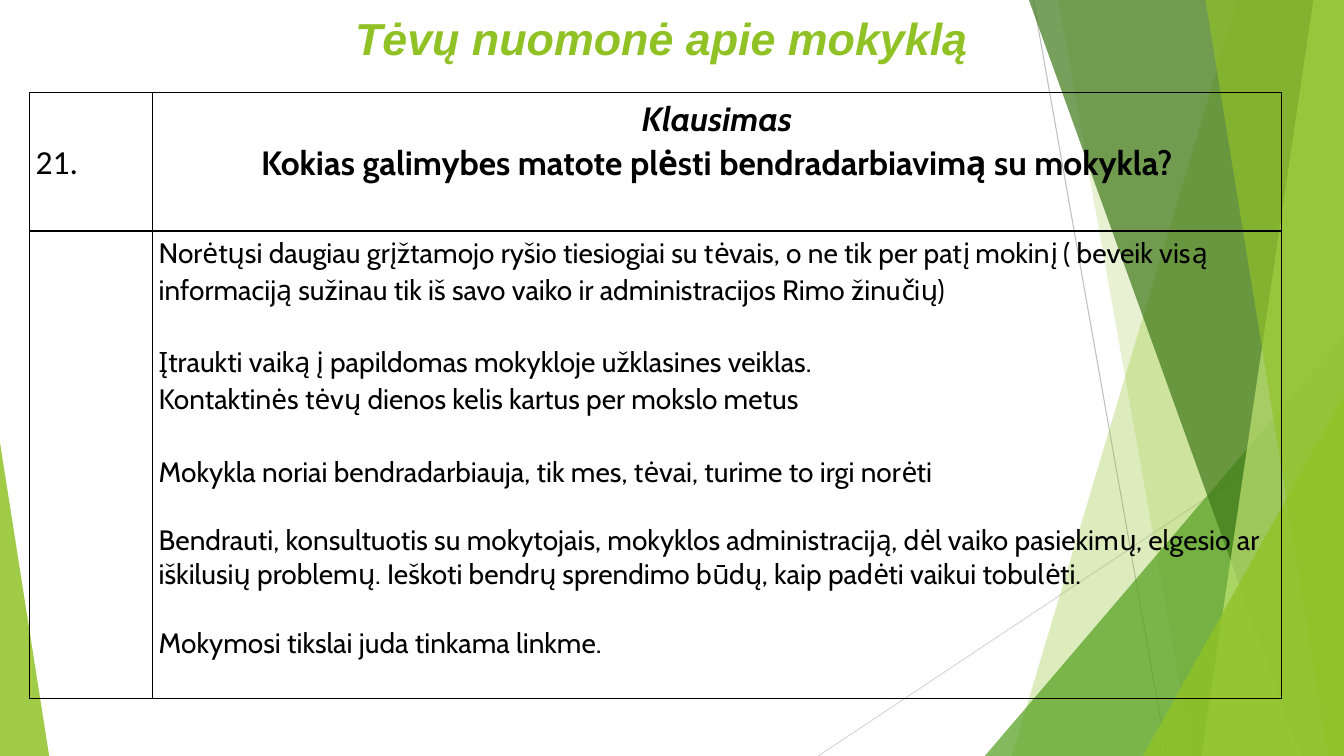
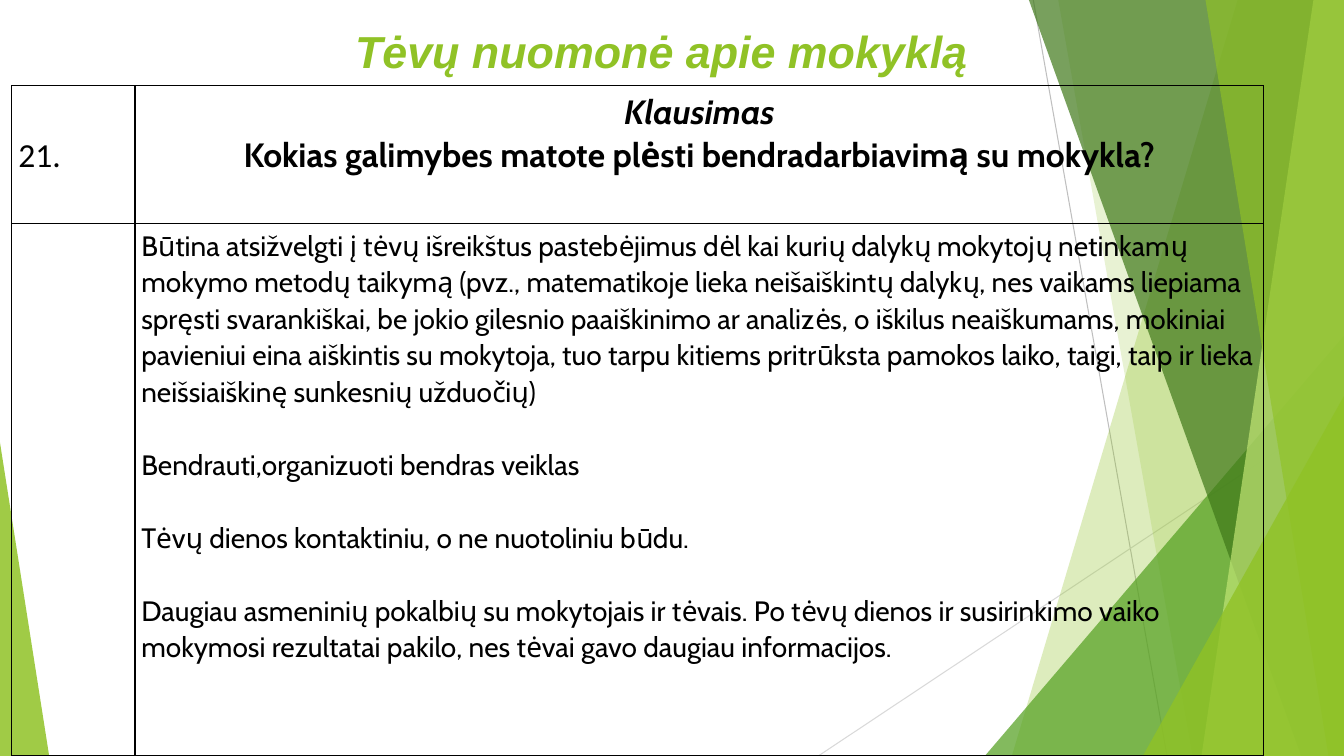
from lxml.etree import SubElement
from pptx import Presentation
from pptx.dml.color import RGBColor
from pptx.enum.shapes import MSO_CONNECTOR, MSO_SHAPE
from pptx.enum.text import MSO_ANCHOR, PP_ALIGN
from pptx.oxml.ns import qn
from pptx.util import Cm, Pt

W, H = 33.87, 19.05
LIME, GREEN, FOREST, PALE = "90C226", "54A021", "3F7819", "C0E474"
BLACK = "000000"

TITLE = dict(name="Arial", size=Pt(32), bold=True, italic=True)
NUMBER = dict(name="Calibri", size=Pt(24))
LABEL = dict(name="Cabin", size=Pt(24), bold=True, italic=True)
QUESTION = dict(name="Cabin", size=Pt(24), bold=True)
ANSWER = dict(name="Cabin", size=Pt(20))

COLUMNS = (3.1, 28.45)
HEADER_HEIGHT = 3.48
LOOSE = dict(line_spacing=1.07, space_before=Pt(26))
JOINED = dict(line_spacing=1.07)
TIGHT = dict(line_spacing=1.0, space_before=Pt(24.5))
CENTRED = dict(line_spacing=1.07, alignment=PP_ALIGN.CENTER)

SLIDES = [
    dict(title_top=0.05, left=0.74, top=2.34, answer_height=11.79, answers=[
        ("Norėtųsi daugiau grįžtamojo ryšio tiesiogiai su tėvais, o ne tik per patį mokinį "
         "( beveik visą informaciją sužinau tik iš savo vaiko ir administracijos Rimo žinučių)",
         JOINED),
        ("Įtraukti vaiką į papildomas mokykloje užklasines veiklas.", LOOSE),
        ("Kontaktinės tėvų dienos kelis kartus per mokslo metus", JOINED),
        ("Mokykla noriai bendradarbiauja, tik mes, tėvai, turime to irgi norėti", LOOSE),
        ("Bendrauti, konsultuotis su mokytojais, mokyklos administraciją, dėl vaiko pasiekimų, "
         "elgesio ar iškilusių problemų. Ieškoti bendrų sprendimo būdų, kaip padėti vaikui "
         "tobulėti.", TIGHT),
        ("Mokymosi tikslai juda tinkama linkme.", TIGHT),
    ]),
    dict(title_top=0.38, left=0.3, top=2.16, answer_height=13.41, answers=[
        ("Būtina atsižvelgti į tėvų išreikštus pastebėjimus dėl kai kurių dalykų mokytojų "
         "netinkamų mokymo metodų taikymą (pvz., matematikoje lieka neišaiškintų dalykų, nes "
         "vaikams liepiama spręsti svarankiškai, be jokio gilesnio paaiškinimo ar analizės, o "
         "iškilus neaiškumams, mokiniai pavieniui eina aiškintis su mokytoja, tuo tarpu kitiems "
         "pritrūksta pamokos laiko, taigi, taip ir lieka neišsiaiškinę sunkesnių užduočių)",
         JOINED),
        ("Bendrauti,organizuoti bendras veiklas", LOOSE),
        ("Tėvų dienos kontaktiniu, o ne nuotoliniu būdu.", LOOSE),
        ("Daugiau asmeninių pokalbių su mokytojais ir tėvais. Po tėvų dienos ir susirinkimo vaiko "
         "mokymosi rezultatai pakilo, nes tėvai gavo daugiau informacijos.", LOOSE),
    ]),
]


def rgb(color):
    return RGBColor.from_string(color)


def set_attrs(obj, values):
    for name, value in values.items():
        setattr(obj, name, value)


def paint(sp, color, opacity):
    """Fill a shape with a see-through colour; opacity is in percent."""
    sp.shadow.inherit = False
    sp.line.fill.background()
    sp.fill.solid()
    sp.fill.fore_color.rgb = rgb(color)
    clr = sp.fill._xPr.find(".//" + qn("a:srgbClr"))
    SubElement(clr, qn("a:alpha"), val=str(opacity * 1000))


def add_line(s, x1, y1, x2, y2, color):
    line = s.shapes.add_connector(MSO_CONNECTOR.STRAIGHT, Cm(x1), Cm(y1), Cm(x2), Cm(y2))
    line.line.color.rgb = rgb(color)
    line.line.width = Pt(0.75)
    SubElement(line._element.spPr, qn("a:effectLst"))


def add_veil(s, top_x, bottom_x, color, opacity):
    """Full-height band from a slanted left edge to the right edge of the slide."""
    builder = s.shapes.build_freeform(Cm(top_x), 0)
    builder.add_line_segments([(Cm(W), 0), (Cm(W), Cm(H)), (Cm(bottom_x), Cm(H))])
    paint(builder.convert_to_shape(), color, opacity)


def add_corner(s, left, top, right, apex, color, opacity):
    """Triangle standing on the bottom edge; apex 0 is left, 1 is right."""
    sp = s.shapes.add_shape(MSO_SHAPE.ISOSCELES_TRIANGLE,
                            Cm(left), Cm(top), Cm(right - left), Cm(H - top))
    sp.adjustments[0] = apex
    paint(sp, color, opacity)


def add_background(s):
    add_line(s, 26.04, 0, 29.41, H, "BFBFBF")
    add_line(s, W, 10.24, 20.62, H, "D9D9D9")
    add_veil(s, 31.19, 25.5, LIME, 30)
    add_veil(s, 26.67, 30.05, LIME, 20)
    add_corner(s, 24.82, 8.46, W, 1, GREEN, 72)
    add_veil(s, 25.93, 32.79, FOREST, 70)
    add_veil(s, 33.1, 30.28, PALE, 70)
    add_veil(s, 30.38, 33.48, LIME, 65)
    add_corner(s, 28.8, 9.98, W, 1, LIME, 80)
    add_corner(s, 0, 11.15, 1.24, 0, LIME, 85)


def write(tf, lines, color=BLACK):
    """Write (text, font, paragraph format) lines, one paragraph each."""
    for i, (text, font, layout) in enumerate(lines):
        p = tf.add_paragraph() if i else tf.paragraphs[0]
        set_attrs(p, layout)
        r = p.add_run()
        r.text = text
        set_attrs(r.font, font)
        r.font.color.rgb = rgb(color)


def add_title(s, top):
    tf = s.shapes.add_textbox(Cm(1.75), Cm(top), Cm(29.54), Cm(2.62)).text_frame
    set_attrs(tf, dict(word_wrap=True, margin_left=Cm(0.56), margin_top=Cm(0.23)))
    write(tf, [("Tėvų nuomonė apie mokyklą", TITLE, dict(alignment=PP_ALIGN.CENTER))], LIME)


def frame_cell(cell):
    """Thin black border on all sides, small margins, no fill."""
    tc_pr = cell._tc.get_or_add_tcPr()
    for side in ("lnL", "lnR", "lnT", "lnB"):
        ln = SubElement(tc_pr, qn("a:" + side), w=str(Pt(1)))
        fill = SubElement(ln, qn("a:solidFill"))
        SubElement(fill, qn("a:srgbClr"), val=BLACK)
    cell.fill.background()
    set_attrs(cell, dict(margin_left=Cm(0.16), margin_right=Cm(0.16),
                         margin_top=Cm(0.08), margin_bottom=Cm(0.08)))


def add_answers(s, left, top, answer_height, answers):
    heights = (HEADER_HEIGHT, answer_height)
    table = s.shapes.add_table(2, 2, Cm(left), Cm(top),
                               Cm(sum(COLUMNS)), Cm(sum(heights))).table
    set_attrs(table, dict(first_row=False, horz_banding=False))
    for column, width in zip(table.columns, COLUMNS):
        column.width = Cm(width)
    for row, height in zip(table.rows, heights):
        row.height = Cm(height)
    for cell in table.iter_cells():
        frame_cell(cell)

    number = table.cell(0, 0)
    number.vertical_anchor = MSO_ANCHOR.MIDDLE
    write(number.text_frame, [("21.", NUMBER, JOINED)])
    write(table.cell(0, 1).text_frame, [
        ("Klausimas", LABEL, CENTRED),
        ("Kokias galimybes matote plėsti bendradarbiavimą su mokykla?", QUESTION, CENTRED),
    ])
    write(table.cell(1, 1).text_frame, [(text, ANSWER, layout) for text, layout in answers])


def main():
    prs = Presentation()
    prs.slide_width, prs.slide_height = Cm(W), Cm(H)
    for content in SLIDES:
        s = prs.slides.add_slide(prs.slide_layouts[6])
        add_background(s)
        add_title(s, content["title_top"])
        add_answers(s, content["left"], content["top"],
                    content["answer_height"], content["answers"])
    prs.save("out.pptx")


if __name__ == "__main__":
    main()
